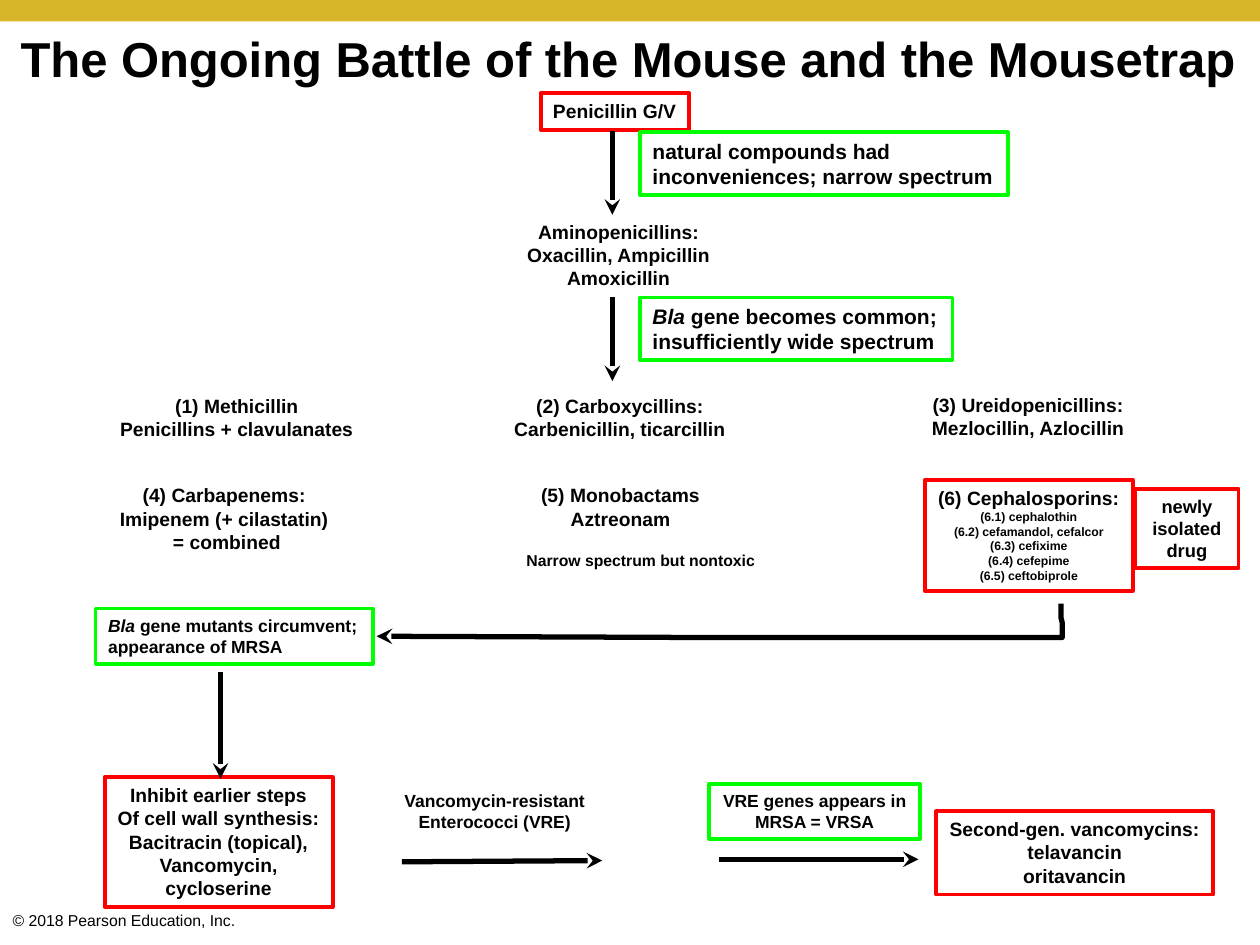
import pptx
import pptx.dml.color
import pptx.enum.shapes
import pptx.enum.text
import pptx.oxml
import pptx.oxml.ns
import pptx.util

BLACK = pptx.dml.color.RGBColor(0x00, 0x00, 0x00)
GOLD = pptx.dml.color.RGBColor(0xD6, 0xB6, 0x28)
RED = pptx.dml.color.RGBColor(0xFF, 0x00, 0x00)
GREEN = pptx.dml.color.RGBColor(0x00, 0xFF, 0x00)
LEFT = pptx.enum.text.PP_ALIGN.LEFT
CENTER = pptx.enum.text.PP_ALIGN.CENTER

# The slide is a grid of 100 columns by 75 rows of square cells
CELL = pptx.util.Inches(0.1)
GENE = "Bla"


def cells(*values):
    return [round(value * CELL) for value in values]


def within(box, left, top):
    """Move a place given relative to a region's box onto the slide."""
    return box[0] + left, box[1] + top


def write(shape, lines, size, align=CENTER, wrap=False, bold=True):
    """Fill a shape with one paragraph a line; a line is text or (text, size)."""
    frame = shape.text_frame
    frame_format = {
        "word_wrap": wrap,
        "auto_size": pptx.enum.text.MSO_AUTO_SIZE.SHAPE_TO_FIT_TEXT,
        "vertical_anchor": pptx.enum.text.MSO_ANCHOR.TOP,
    }
    for name, value in frame_format.items():
        setattr(frame, name, value)
    for index, line in enumerate(lines):
        text, line_size = line if isinstance(line, tuple) else (line, size)
        paragraph = frame.add_paragraph() if index else frame.paragraphs[0]
        paragraph.alignment = align
        # The gene name is set in italics
        gene = GENE if text.startswith(GENE) else ""
        for part, italic in ((gene, True), (text[len(gene):], False)):
            if not part:
                continue
            run = paragraph.add_run()
            run.text = part
            run_format = {"name": "Arial", "size": pptx.util.Pt(line_size),
                          "bold": bold, "italic": italic}
            for name, value in run_format.items():
                setattr(run.font, name, value)
            run.font.color.rgb = BLACK


def add_label(slide, box, place, lines, size=11, border=None, weight=2.25,
              **text_format):
    left, top, width, height = place
    shape = slide.shapes.add_textbox(
        *cells(*within(box, left, top), width, height))
    if border is not None:
        shape.line.color.rgb = border
        shape.line.width = pptx.util.Pt(weight)
    write(shape, lines, size, **text_format)
    return shape


def style_arrow(shape):
    shape.line.color.rgb = BLACK
    shape.line.width = pptx.util.Pt(3)
    shape.line._get_or_add_ln().append(
        pptx.oxml.parse_xml(
            f'<a:tailEnd {pptx.oxml.ns.nsdecls("a")} type="stealth"/>'))
    shape._element.spPr.append(
        pptx.oxml.parse_xml(f'<a:effectLst {pptx.oxml.ns.nsdecls("a")}/>'))


def add_arrow(slide, box, start, end):
    connector = slide.shapes.add_connector(
        pptx.enum.shapes.MSO_CONNECTOR.STRAIGHT,
        *cells(*within(box, *start), *within(box, *end)))
    style_arrow(connector)


def add_bent_arrow(slide, box, points):
    first, *others = [tuple(cells(*within(box, *point))) for point in points]
    builder = slide.shapes.build_freeform(*first)
    builder.add_line_segments(others, close=False)
    shape = builder.convert_to_shape()
    shape.fill.background()
    style_arrow(shape)


def draw_header(slide, box):
    left, top, width, height = box
    band = slide.shapes.add_shape(
        pptx.enum.shapes.MSO_SHAPE.RECTANGLE, *cells(left, top, width, 1.7))
    band.shadow.inherit = False
    band.fill.solid()
    band.fill.fore_color.rgb = GOLD
    band.line.fill.background()

    title = slide.shapes.title
    place = cells(left, top + 1.8, width - 0.3, height - 1.8)
    for name, value in zip(("left", "top", "width", "height"), place):
        setattr(title, name, value)
    write(title, ["The Ongoing Battle of the Mouse and the Mousetrap"], 28)


def draw_early_penicillins(slide, box):
    """Two generations, each followed by an arrow and its drawback."""
    add_label(slide, box, (2.1, 0, 11.8, 2.9), ["Penicillin G/V"],
              border=RED, align=LEFT)
    add_label(slide, box, (0, 9.6, 16.6, 6.6),
              ["Aminopenicillins:", "Oxacillin, Ampicillin", "Amoxicillin"])
    for top in (3, 16.2):
        add_arrow(slide, box, (7.8, top), (7.8, top + 6.65))
    drawback = {"size": 12, "border": GREEN, "weight": 2, "align": LEFT}
    add_label(slide, box, (10, 3.1, 29.2, 5),
              ["natural compounds had inconveniences; narrow spectrum"],
              wrap=True, **drawback)
    add_label(slide, box, (10, 16.2, 24.8, 5),
              ["Bla gene becomes common;", "insufficiently wide spectrum"],
              **drawback)


def draw_drug_classes(slide, box):
    """Six classes in two rows of three."""
    classes = [
        ((0, 0.1, 20.6, 4.7), ["(1) Methicillin", "Penicillins + clavulanates"]),
        ((31.3, 0.1, 18.8, 4.7),
         ["(2) Carboxycillins:", "Carbenicillin, ticarcillin"]),
        ((64.4, 0, 17.4, 4.7),
         ["(3) Ureidopenicillins:", "Mezlocillin, Azlocillin"]),
        ((0, 7.2, 18.6, 6.6),
         ["(4) Carbapenems:", "Imipenem (+ cilastatin)", " = combined"]),
        ((33.4, 7.2, 14.7, 4.7), ["(5) Monobactams", "Aztreonam"]),
    ]
    for place, lines in classes:
        add_label(slide, box, place, lines)
    add_label(slide, box, (32.3, 12.5, 20.3, 2.5),
              ["Narrow spectrum but nontoxic"], size=9, align=LEFT)

    generations = ["cephalothin", "cefamandol, cefalcor", "cefixime",
                   "cefepime", "ceftobiprole"]
    add_label(slide, box, (64.9, 7.4, 16.5, 8.8),
              ["(6) Cephalosporins:"]
              + [(f"(6.{number}) {name}", 7)
                 for number, name in enumerate(generations, 1)], border=RED)
    add_label(slide, box, (81.6, 8.1, 8.2, 6.3), ["newly isolated drug"],
              size=10.5, border=RED, wrap=True)


def draw_resistance(slide, box):
    """Resistant strains and the drugs that answer them."""
    add_label(slide, box, (0, 0.4, 22, 4.4),
              ["Bla gene mutants circumvent;", "appearance of MRSA"],
              size=10, border=GREEN, weight=2, align=LEFT)
    add_bent_arrow(slide, box, [(76.6, 0), (76.6, 1.1), (76.7, 1.5),
                                (76.7, 2.7), (49, 2.7), (22.3, 2.6)])
    add_label(slide, box, (0.7, 13.8, 18.1, 10.3),
              ["Inhibit earlier steps", "Of cell wall synthesis:",
               "Bacitracin (topical),", "Vancomycin,", "cycloserine"],
              border=RED)
    add_label(slide, box, (23.4, 14.3, 16.5, 4.4),
              ["Vancomycin-resistant", "Enterococci (VRE)"], size=10)
    add_label(slide, box, (48.7, 14.3, 16.7, 4.4),
              ["VRE genes appears in", "MRSA = VRSA"], size=10, border=GREEN)
    add_label(slide, box, (66.7, 16.5, 22, 6.6),
              ["Second-gen. vancomycins:", "telavancin", "oritavancin"],
              border=RED)
    add_arrow(slide, box, (9.9, 5.4), (9.9, 13.9))
    add_arrow(slide, box, (24.3, 20.5), (40.2, 20.4))
    add_arrow(slide, box, (49.5, 20.3), (65.3, 20.3))


def draw_footer(slide, box):
    label = add_label(slide, box, (0, 0, *box[2:]),
                      ["© 2018 Pearson Education, Inc."], size=9,
                      align=LEFT, wrap=True, bold=False)
    for side in ("left", "top", "right", "bottom"):
        setattr(label.text_frame, f"margin_{side}", 0)


def main():
    presentation = pptx.Presentation()
    presentation.slide_width, presentation.slide_height = cells(100, 75)
    slide = presentation.slides.add_slide(presentation.slide_layouts[5])
    draw_header(slide, (0, 0, 100, 7.5))
    draw_early_penicillins(slide, (40.8, 7.4, 39.2, 22.9))
    draw_drug_classes(slide, (8.5, 30.7, 89.8, 16.2))
    draw_resistance(slide, (7.6, 47.9, 88.7, 24.1))
    draw_footer(slide, (1, 72.3, 59, 2))
    presentation.save("out.pptx")


if __name__ == "__main__":
    main()
